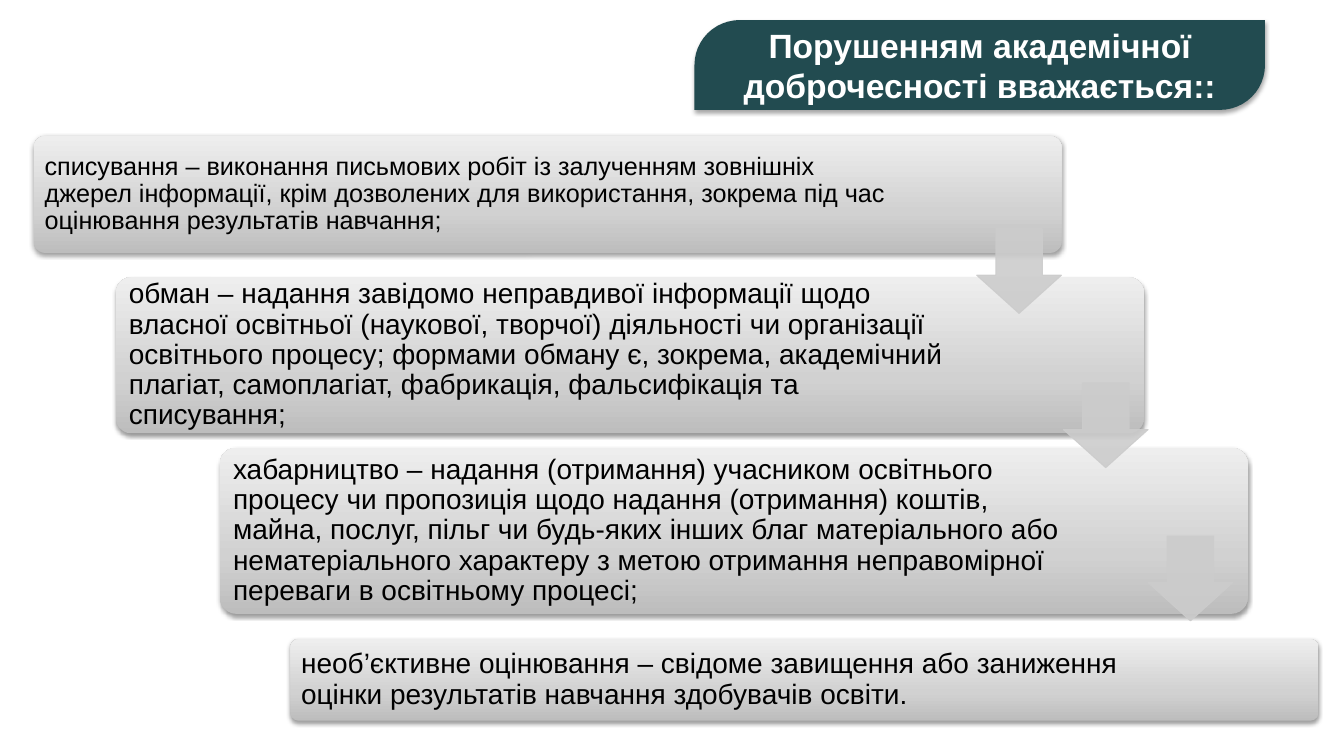
from lxml import etree
from pptx import Presentation
from pptx.dml.color import RGBColor
from pptx.enum.shapes import MSO_SHAPE as Preset
from pptx.enum.text import MSO_ANCHOR as Anchor, PP_ALIGN as Align
from pptx.oxml import parse_xml
from pptx.oxml.ns import nsdecls, qn
from pptx.util import Pt

TITLE = "Порушенням академічної доброчесності вважається::"
TITLE_BOX = (496.1, 14.4, 407.5, 64.1)
VIOLATIONS = [
    ("списування – виконання письмових робіт із залученням зовнішніх джерел інформації, "
     "крім дозволених для використання, зокрема під час оцінювання результатів навчання;",
     24, 97.2, 83.5, 627.1, 18),
    ("обман – надання завідомо неправдивої інформації щодо власної освітньої (наукової, "
     "творчої) діяльності чи організації освітнього процесу; формами обману є, зокрема, "
     "академічний плагіат, самоплагіат, фабрикація, фальсифікація та списування;",
     82.8, 198, 111.6, 606.2, 20),
    ("хабарництво – надання (отримання) учасником освітнього процесу чи пропозиція щодо "
     "надання (отримання) коштів, майна, послуг, пільг чи будь-яких інших благ матеріального "
     "або нематеріального характеру з метою отримання неправомірної переваги в освітньому процесі;",
     157, 319.7, 118.8, 606.2, 20),
    ("необ’єктивне оцінювання – свідоме завищення або заниження оцінки результатів навчання "
     "здобувачів освіти.",
     207.4, 456.5, 58.3, 609.1, 20),
]
ARROWS = [(697.7, 163.4), (759.6, 273.6), (820.1, 383)]
BAR_WIDTH = 734.4
ARROW_SIZE = 60.5
CORNER = 0.1
TEXT_INSET = CORNER * 0.29
MARGIN_PER_SIZE = 0.3
BAR_STOPS = [(0, "BDBDBD"), (35, "D1D1D1"), (100, "EEEEEE")]
BLACK = RGBColor(0, 0, 0)
WHITE = RGBColor(255, 255, 255)
TEAL = RGBColor(0x22, 0x4B, 0x50)
SILVER = RGBColor(0xCC, 0xCC, 0xCC)


def write(shape, text, size, color, bold=False, align=Align.LEFT, spacing=None, margin=None):
    frame = shape.text_frame
    frame.word_wrap = True
    frame.vertical_anchor = Anchor.MIDDLE
    if margin is not None:
        frame.margin_left = frame.margin_right = Pt(margin)
        frame.margin_top = frame.margin_bottom = Pt(margin)
    para = frame.paragraphs[0]
    para.alignment = align
    para.line_spacing = spacing
    span = para.add_run()
    span.text = text
    span.font.name = "Arial"
    span.font.size = Pt(size)
    span.font.bold = bold
    span.font.color.rgb = color


def add_preset(page, preset, box, adjustments):
    shape = page.shapes.add_shape(preset, *map(Pt, box))
    for index, value in enumerate(adjustments):
        shape.adjustments[index] = value
    shape.shadow.inherit = False
    return shape


def cast_shadow(shape, opacity, distance):
    effects = shape.element.spPr.find(qn("a:effectLst"))
    effects.append(parse_xml(
        f'<a:outerShdw {nsdecls("a")} blurRad="{Pt(3.1)}" dist="{Pt(distance)}" dir="5400000" '
        f'rotWithShape="0"><a:srgbClr val="000000"><a:alpha val="{opacity * 1000}"/>'
        '</a:srgbClr></a:outerShdw>'))


def fill_bar(shape):
    shape.fill.gradient()
    shape.fill.gradient_angle = 90
    stops = shape.element.spPr.find(qn("a:gradFill")).find(qn("a:gsLst"))
    for stop in list(stops):
        stops.remove(stop)
    for position, color in BAR_STOPS:
        stop = etree.SubElement(stops, qn("a:gs"), pos=str(position * 1000))
        etree.SubElement(stop, qn("a:srgbClr"), val=color)


def make_translucent(shape, opacity):
    for color in shape.element.spPr.iter(qn("a:srgbClr")):
        etree.SubElement(color, qn("a:alpha"), val=str(opacity * 1000))


def main():
    deck = Presentation()
    deck.slide_width, deck.slide_height = Pt(960), Pt(540)
    page = deck.slides.add_slide(deck.slide_layouts[6])

    for text, left, top, height, text_width, size in VIOLATIONS:
        bar = add_preset(page, Preset.ROUNDED_RECTANGLE, (left, top, BAR_WIDTH, height), [CORNER])
        fill_bar(bar)
        bar.line.fill.background()
        cast_shadow(bar, 38, 1.6)
        inset = height * TEXT_INSET
        label = page.shapes.add_textbox(
            Pt(left + inset), Pt(top + inset), Pt(text_width), Pt(height - 2 * inset))
        write(label, text, size, BLACK, spacing=0.9, margin=size * MARGIN_PER_SIZE)

    for left, top in ARROWS:
        arrow = add_preset(page, Preset.DOWN_ARROW, (left, top, ARROW_SIZE, ARROW_SIZE), [0.55, 0.45])
        arrow.fill.solid()
        arrow.fill.fore_color.rgb = SILVER
        arrow.line.color.rgb = SILVER
        arrow.line.width = Pt(0.75)
        make_translucent(arrow, 90)

    title = add_preset(page, Preset.ROUND_2_DIAG_RECTANGLE, TITLE_BOX, [0.5, 0])
    title.fill.solid()
    title.fill.fore_color.rgb = TEAL
    title.line.fill.background()
    cast_shadow(title, 35, 1.8)
    write(title, TITLE, 24, WHITE, bold=True, align=Align.CENTER)

    deck.save("out.pptx")


if __name__ == "__main__":
    main()
